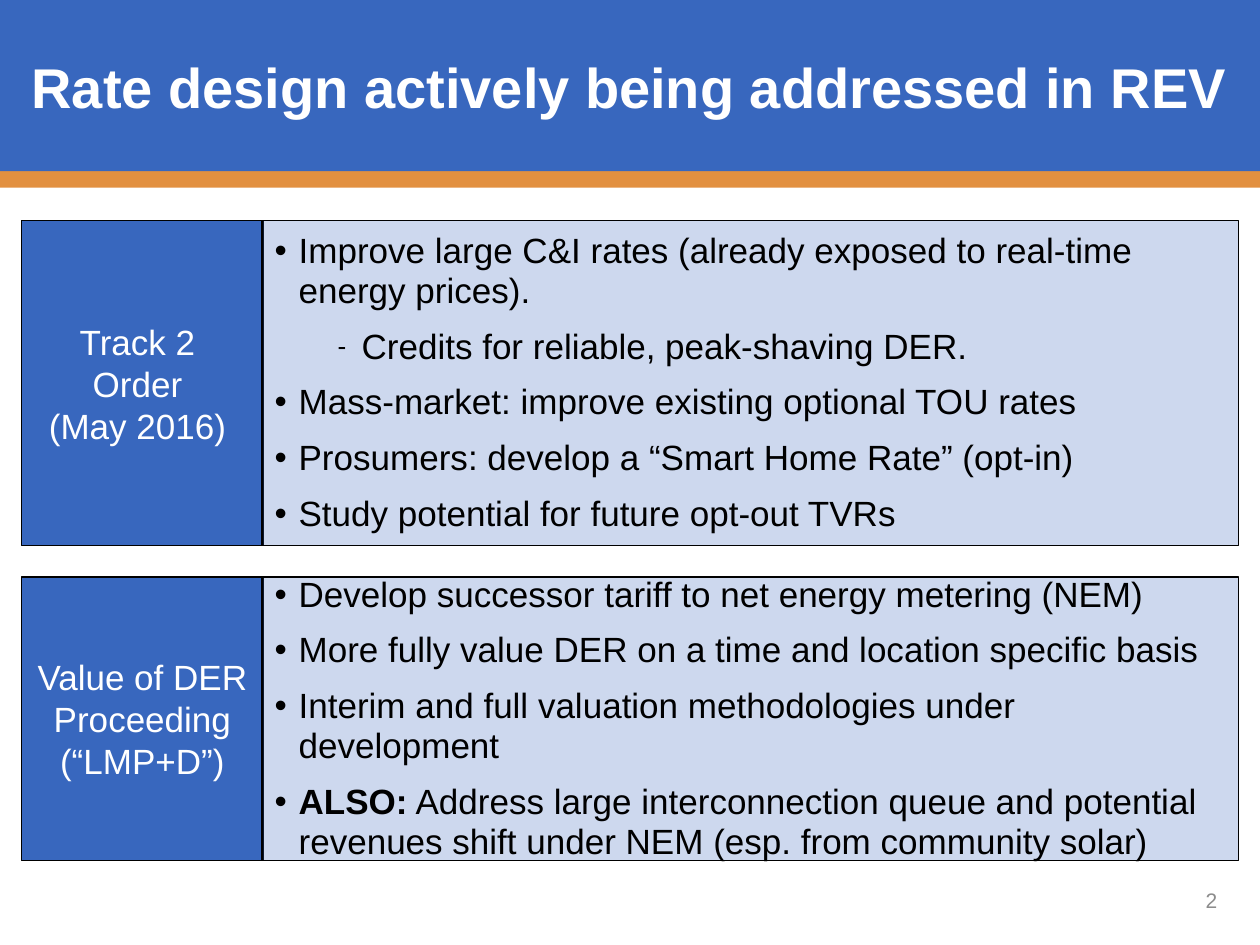
import pptx
import pptx.dml.color
import pptx.enum.shapes
import pptx.enum.text
import pptx.oxml
import pptx.oxml.ns
import pptx.util
import dataclasses

Inches = pptx.util.Inches
Pt = pptx.util.Pt
Anchor = pptx.enum.text.MSO_ANCHOR
Align = pptx.enum.text.PP_ALIGN
RECT = pptx.enum.shapes.MSO_SHAPE.RECTANGLE


@dataclasses.dataclass
class Theme:
    font: str = "Arial"
    blue: str = "3867BE"
    orange: str = "E29040"
    white: str = "FFFFFF"
    black: str = "000000"
    gray: str = "8C8C8C"
    head: int = 32
    text: int = 20
    small: int = 12


theme = Theme()


def paint(shape, fill, line=None):
    """Give a shape a solid fill and a thin line or none."""
    shape.fill.solid()
    shape.fill.fore_color.rgb = pptx.dml.color.RGBColor.from_string(fill)
    if line:
        shape.line.color.rgb = pptx.dml.color.RGBColor.from_string(line)
        shape.line.width = Pt(0.75)
    else:
        shape.line.fill.background()


def style(para, size, color, bold=False):
    """Format every run of a paragraph."""
    for run in para.runs:
        look = {"name": theme.font, "size": Pt(size), "bold": bold}
        for key, value in look.items():
            setattr(run.font, key, value)
        run.font.color.rgb = pptx.dml.color.RGBColor.from_string(color)


# Each row: top, height, label, list of (level, bold lead, text)
rows = [
    (1.75, 2.58, "Track 2 \nOrder \n(May 2016) ", [
        (0, "", "Improve large C&I rates (already exposed to real-time energy prices)."),
        (1, "", "Credits for reliable, peak-shaving DER."),
        (0, "", "Mass-market: improve existing optional TOU rates"),
        (0, "", "Prosumers: develop a “Smart Home Rate” (opt-in)"),
        (0, "", "Study potential for future opt-out TVRs"),
    ]),
    (4.58, 2.25, "Value of DER Proceeding (“LMP+D”)", [
        (0, "", "Develop successor tariff to net energy metering (NEM)"),
        (0, "", "More fully value DER on a time and location specific basis"),
        (0, "", "Interim and full valuation methodologies under development"),
        (0, "ALSO:", " Address large interconnection queue and potential "
                     "revenues shift under NEM (esp. from community solar)"),
    ]),
]
# Bullet sign, size in percent and left indent by level
marks = [("•", 100, 0.19), ("-", 75, 0.69)]

deck = pptx.Presentation()
deck.slide_width, deck.slide_height = Inches(10), Inches(7.5)
slide = deck.slides.add_slide(deck.slide_layouts[3])
title, *bodies = slide.placeholders

# Header bands, behind the title
for top, color in [(0.13, theme.orange), (0, theme.blue)]:
    band = slide.shapes.add_shape(RECT, 0, Inches(top), Inches(10), Inches(1.36))
    band.shadow.inherit = False
    paint(band, color)
    title.element.addprevious(band.element)

# Title
place = {"left": 0.25, "top": 0, "width": 9.54, "height": 1.36}
for key, value in place.items():
    setattr(title, key, Inches(value))
frame = title.text_frame
frame.text = "Rate design actively being addressed in REV"
form = {"margin_left": 0, "margin_right": 0, "margin_top": 0, "margin_bottom": 0,
        "vertical_anchor": Anchor.MIDDLE, "word_wrap": True,
        "auto_size": pptx.enum.text.MSO_AUTO_SIZE.NONE}
for key, value in form.items():
    setattr(frame, key, value)
frame.paragraphs[0].alignment = Align.LEFT
style(frame.paragraphs[0], theme.head, theme.white, True)

# Rows: a blue label and a tinted list
for body, (top, height, name, items) in zip(bodies, rows):
    label = slide.shapes.add_shape(RECT, Inches(0.17), Inches(top), Inches(1.92), Inches(height))
    label.shadow.inherit = False
    paint(label, theme.blue, theme.black)
    label.text_frame.word_wrap = True
    label.text_frame.vertical_anchor = Anchor.MIDDLE
    para = label.text_frame.paragraphs[0]
    para.text = name
    para.alignment = Align.CENTER
    style(para, theme.text, theme.white)
    body.element.addprevious(label.element)

    place = {"left": 2.08, "top": top, "width": 7.75, "height": height}
    for key, value in place.items():
        setattr(body, key, Inches(value))
    paint(body, theme.blue, theme.black)
    tint = body.element.spPr.find(".//" + pptx.oxml.ns.qn("a:srgbClr"))
    tint.append(pptx.oxml.parse_xml(
        f'<a:alpha {pptx.oxml.ns.nsdecls("a")} val="25000"/>'))
    frame = body.text_frame
    frame.word_wrap = True
    frame.auto_size = pptx.enum.text.MSO_AUTO_SIZE.NONE
    frame.vertical_anchor = Anchor.MIDDLE

    for num, (level, lead, text) in enumerate(items):
        para = frame.add_paragraph() if num else frame.paragraphs[0]
        sign, size, left = marks[level]
        props = para._p.get_or_add_pPr()
        props.set("marL", str(Inches(left)))
        props.set("indent", str(-Inches(0.19)))
        for tag in (f'buSzPct val="{size * 1000}"', f'buFont typeface="{theme.font}"',
                    f'buChar char="{sign}"'):
            props.append(pptx.oxml.parse_xml(
                f'<a:{tag} {pptx.oxml.ns.nsdecls("a")}/>'))
        form = {"level": level, "line_spacing": 0.95,
                "space_before": Pt(0), "space_after": Pt(9)}
        for key, value in form.items():
            setattr(para, key, value)
        for part in filter(None, (lead, text)):
            para.add_run().text = part
        style(para, theme.text, theme.black)
        if lead:
            para.runs[0].font.bold = True

# Page number
page = slide.shapes.add_textbox(Inches(8), Inches(6.97), Inches(1.76), Inches(0.35))
page.text_frame.word_wrap = True
page.text_frame.vertical_anchor = Anchor.MIDDLE
para = page.text_frame.paragraphs[0]
para.text = "2"
para.alignment = Align.RIGHT
style(para, theme.small, theme.gray)

deck.save("out.pptx")
